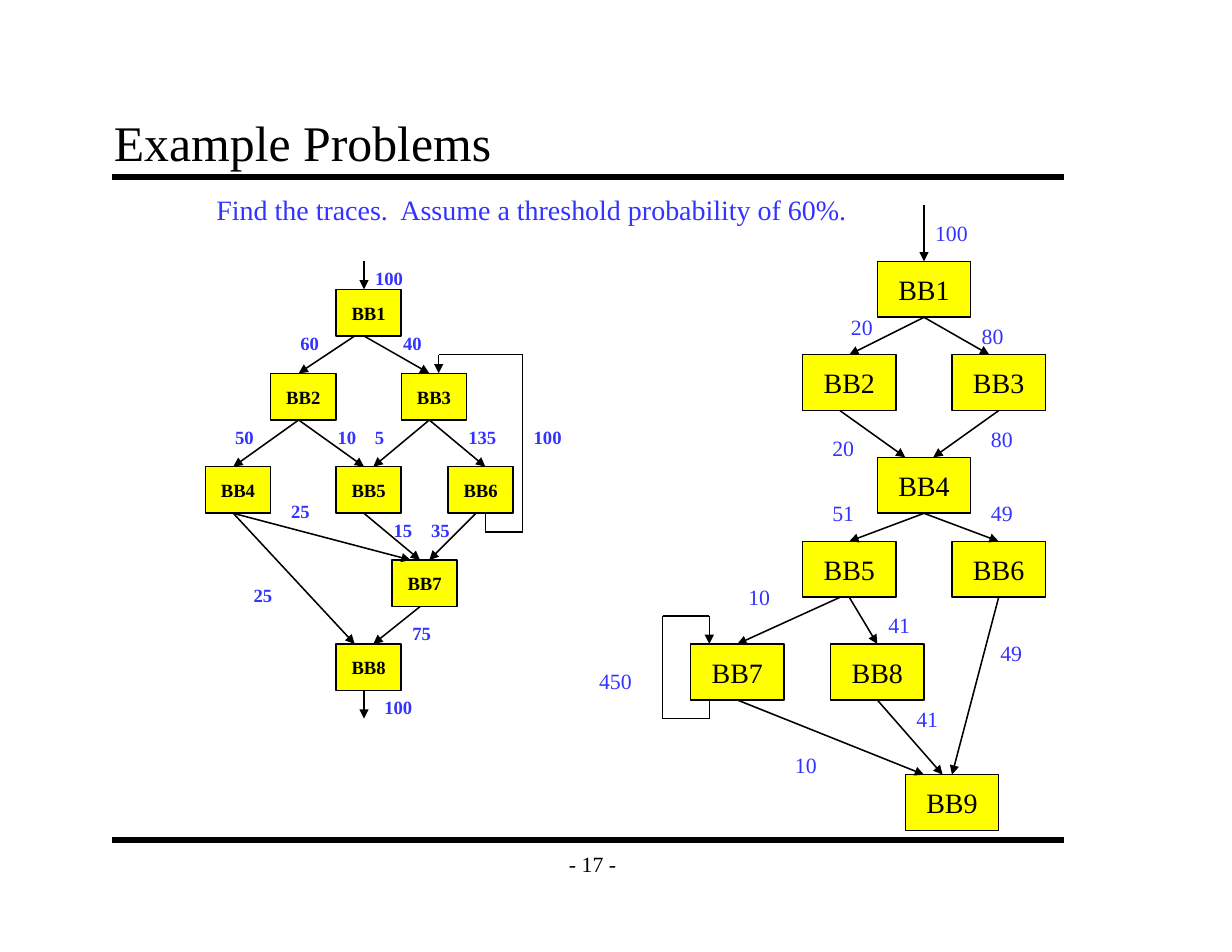
from dataclasses import dataclass
from itertools import pairwise

from lxml import etree
from pptx import Presentation
from pptx import util as u
from pptx.dml.color import RGBColor
from pptx.enum import shapes, text
from pptx.oxml.ns import qn

BLACK = RGBColor(0x00, 0x00, 0x00)
BLUE = RGBColor(0x33, 0x33, 0xFF)
YELLOW = RGBColor(0xFF, 0xFF, 0x00)
FONT = "Times New Roman"
COLS, ROWS = 132, 102
WIDTH, HEIGHT = u.Inches(11), u.Inches(8.5)

Point = tuple[float, float]


@dataclass(frozen=True)
class Edge:
    src: str
    src_col: float
    dst: str
    dst_col: float


@dataclass(frozen=True)
class Label:
    text: str
    col: float
    row: float


@dataclass(frozen=True)
class FlowGraph:
    node_cols: float
    node_rows: float
    node_pt: int
    label_pt: int
    bold: bool
    nodes: dict[str, Point]
    edges: list[Edge]
    paths: list[list[Point]]
    labels: list[Label]


LEFT = FlowGraph(
    7, 5, 12, 12, True,
    nodes={"BB1": (36, 31), "BB2": (29, 40), "BB3": (43, 40), "BB4": (22, 50),
           "BB5": (36, 50), "BB6": (48, 50), "BB7": (42, 60), "BB8": (36, 69)},
    edges=[Edge("BB1", 38, "BB2", 32), Edge("BB1", 39, "BB3", 46),
           Edge("BB2", 32, "BB4", 25), Edge("BB2", 32, "BB5", 39),
           Edge("BB3", 46, "BB5", 40), Edge("BB3", 46, "BB6", 52),
           Edge("BB4", 25, "BB8", 38), Edge("BB4", 25, "BB7", 44),
           Edge("BB5", 39, "BB7", 45), Edge("BB6", 51, "BB7", 46),
           Edge("BB7", 45, "BB8", 40)],
    paths=[[(39, 28), (39, 31)],
           [(39, 74), (39, 77)],
           [(52, 55), (52, 57), (56, 57), (56, 38), (47, 38), (47, 40)]],
    labels=[Label("100", 39, 28), Label("60", 31, 35), Label("40", 42, 35),
            Label("50", 24, 45), Label("10", 35, 45), Label("5", 39, 45),
            Label("135", 49, 45), Label("100", 56, 45), Label("25", 30, 53),
            Label("15", 41, 55), Label("35", 45, 55), Label("25", 26, 62),
            Label("75", 43, 66), Label("100", 40, 74)],
)

RIGHT = FlowGraph(
    10, 6, 18, 14, False,
    nodes={"BB1": (94, 28), "BB2": (86, 38), "BB3": (102, 38),
           "BB4": (94, 49), "BB5": (86, 58), "BB6": (102, 58),
           "BB7": (74, 69), "BB8": (89, 69), "BB9": (97, 83)},
    edges=[Edge("BB1", 99, "BB2", 91), Edge("BB1", 99, "BB3", 106),
           Edge("BB2", 90, "BB4", 97), Edge("BB3", 107, "BB4", 100),
           Edge("BB4", 99, "BB5", 91), Edge("BB4", 99, "BB6", 107),
           Edge("BB5", 90, "BB7", 79), Edge("BB5", 91, "BB8", 94),
           Edge("BB7", 79, "BB9", 99), Edge("BB8", 94, "BB9", 101),
           Edge("BB6", 107, "BB9", 102)],
    paths=[[(99, 22), (99, 28)],
           [(76, 75), (76, 77), (71, 77), (71, 66), (76, 66), (76, 69)]],
    labels=[Label("100", 99, 23), Label("20", 90, 33), Label("80", 104, 34),
            Label("20", 88, 46), Label("80", 105, 45), Label("51", 88, 53),
            Label("49", 105, 53), Label("10", 79, 62), Label("41", 94, 65),
            Label("49", 106, 68), Label("450", 63, 71), Label("41", 97, 75),
            Label("10", 84, 80)],
)


def x(cols: float) -> int:
    return round(WIDTH * cols / COLS)


def y(rows: float) -> int:
    return round(HEIGHT * rows / ROWS)


def write(tf, words: str, pt: int, color: RGBColor, bold: bool = False,
          align=text.PP_ALIGN.LEFT, anchor=text.MSO_ANCHOR.TOP) -> None:
    tf.text = words
    tf.vertical_anchor = anchor
    p = tf.paragraphs[0]
    p.alignment = align
    f = p.runs[0].font
    f.name, f.size, f.bold = FONT, u.Pt(pt), bold
    f.color.rgb = color


def add_line(s, start: Point, end: Point, pt: float = 1, arrow: bool = False) -> None:
    c = s.shapes.add_connector(shapes.MSO_CONNECTOR.STRAIGHT,
                               x(start[0]), y(start[1]), x(end[0]), y(end[1]))
    c.line.color.rgb = BLACK
    c.line.width = u.Pt(pt)
    if arrow:
        etree.SubElement(c.line._get_or_add_ln(), qn("a:tailEnd"), type="triangle")
    etree.SubElement(c._element.spPr, qn("a:effectLst"))


def add_path(s, points: list[Point]) -> None:
    for start, end in pairwise(points):
        add_line(s, start, end, arrow=end is points[-1])


def add_node(s, name: str, g: FlowGraph) -> None:
    col, row = g.nodes[name]
    sp = s.shapes.add_shape(shapes.MSO_SHAPE.RECTANGLE, x(col), y(row),
                            x(g.node_cols), y(g.node_rows))
    sp.shadow.inherit = False
    sp.fill.solid()
    sp.fill.fore_color.rgb = YELLOW
    sp.line.color.rgb = BLACK
    sp.line.width = u.Pt(1)
    sp.text_frame.word_wrap = False
    write(sp.text_frame, name, g.node_pt, BLACK, g.bold,
          text.PP_ALIGN.CENTER, text.MSO_ANCHOR.MIDDLE)


def add_label(s, label: Label, pt: int, bold: bool = False) -> None:
    width = u.Inches(0.2) + u.Pt(pt * len(label.text) / 2)
    height = u.Inches(0.1) + u.Pt(pt * 1.2)
    tb = s.shapes.add_textbox(x(label.col), y(label.row), width, height)
    tb.text_frame.word_wrap = False
    write(tb.text_frame, label.text, pt, BLUE, bold)


def add_graph(s, g: FlowGraph) -> None:
    for name in g.nodes:
        add_node(s, name, g)
    for e in g.edges:
        bottom = g.nodes[e.src][1] + g.node_rows
        add_path(s, [(e.src_col, bottom), (e.dst_col, g.nodes[e.dst][1])])
    for path in g.paths:
        add_path(s, path)
    for label in g.labels:
        add_label(s, label, g.label_pt, g.bold)


def main() -> None:
    prs = Presentation()
    prs.slide_width, prs.slide_height = WIDTH, HEIGHT
    s = prs.slides.add_slide(prs.slide_layouts[5])

    title = s.shapes.title
    title.left, title.top, title.width, title.height = x(11), y(11), x(102), y(8)
    write(title.text_frame, "Example Problems", 32, BLACK,
          anchor=text.MSO_ANCHOR.BOTTOM)
    for row in (19, 90):
        add_line(s, (12, row), (114, row), pt=4)

    page = s.shapes.add_textbox(x(59), y(90), x(9), y(5))
    page.text_frame.word_wrap = False
    write(page.text_frame, "- 17 -", 14, BLACK, align=text.PP_ALIGN.CENTER,
          anchor=text.MSO_ANCHOR.MIDDLE)

    add_label(s, Label("Find the traces.  Assume a threshold probability of 60%.", 22, 20), 18)
    for graph in (LEFT, RIGHT):
        add_graph(s, graph)
    prs.save("out.pptx")


if __name__ == "__main__":
    main()
